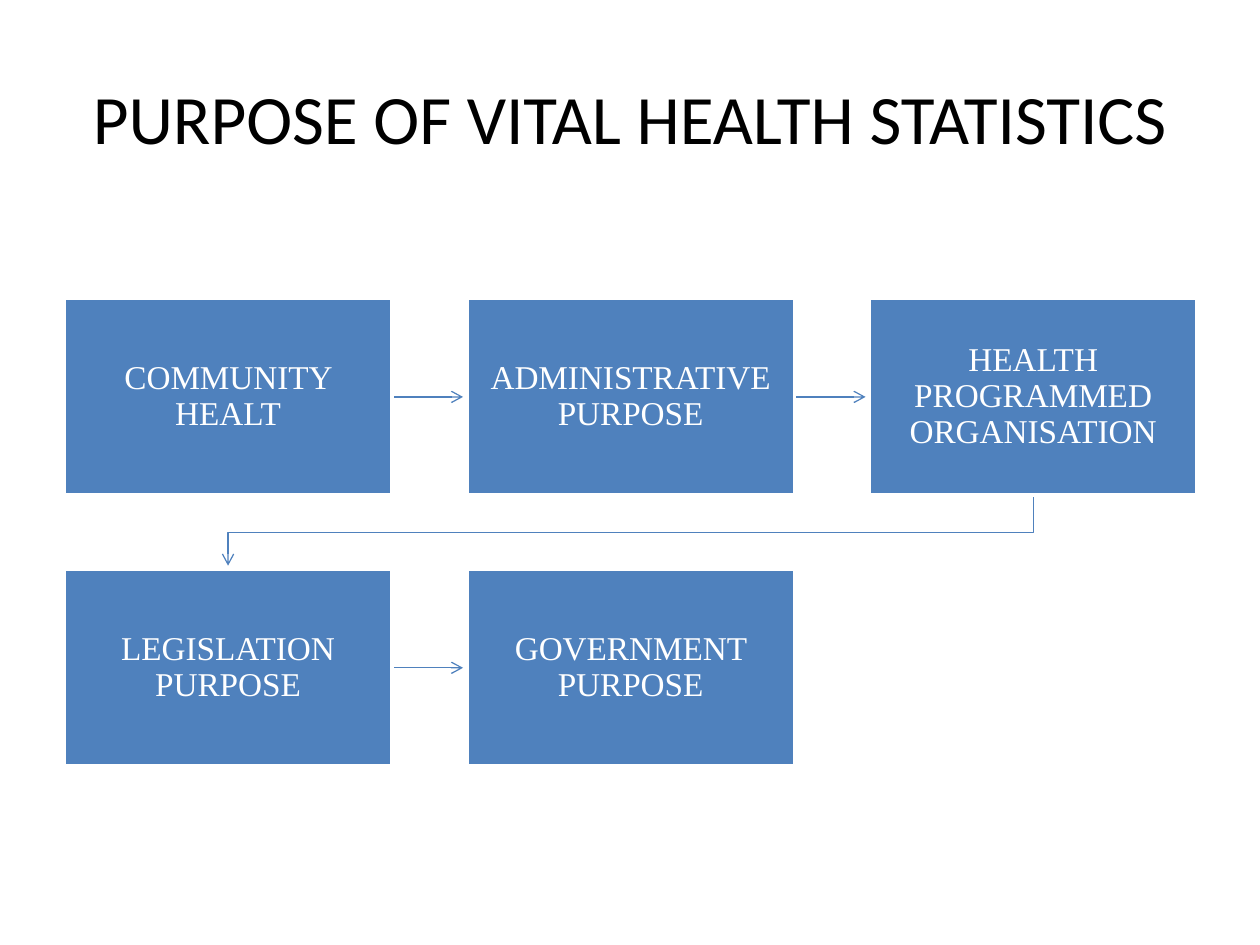
import dataclasses

import lxml.etree
import pptx
import pptx.dml.color
import pptx.enum.shapes
import pptx.enum.text
import pptx.oxml.ns
import pptx.util

Inches = pptx.util.Inches
Pt = pptx.util.Pt
qn = pptx.oxml.ns.qn


@dataclasses.dataclass(frozen=True)
class Theme:
    accent = pptx.dml.color.RGBColor.from_string("4F81BD")
    white = pptx.dml.color.RGBColor.from_string("FFFFFF")
    black = pptx.dml.color.RGBColor.from_string("000000")
    title_font: str = "Calibri"
    title_size: float = 39.6
    box_font: str = "Times New Roman"
    box_size: float = 19
    border_width: float = 2
    arrow_width: float = 0.75


THEME = Theme()
PURPOSES = [
    "COMMUNITY HEALT",
    "ADMINISTRATIVE PURPOSE",
    "HEALTH PROGRAMMED ORGANISATION",
    "LEGISLATION PURPOSE",
    "GOVERNMENT PURPOSE",
]
COLUMNS = 3
LEFT, TOP = 0.51, 2.37
BOX_WIDTH, BOX_HEIGHT = 2.6, 1.56
COLUMN_STEP, ROW_STEP = 3.195, 2.15
ARROW_GAP = 0.03


def box_position(index):
    row, column = divmod(index, COLUMNS)
    return LEFT + column * COLUMN_STEP, TOP + row * ROW_STEP


def format_text(paragraph, font_name, size, color):
    paragraph.alignment = pptx.enum.text.PP_ALIGN.CENTER
    for run in paragraph.runs:
        run.font.name = font_name
        run.font.size = Pt(size)
        run.font.color.rgb = color


def set_title(slide, text):
    title = slide.shapes.title
    title.left, title.top = Inches(0.5), Inches(0.3)
    title.width, title.height = Inches(9), Inches(1.25)
    frame = title.text_frame
    frame.text = text
    frame.vertical_anchor = pptx.enum.text.MSO_ANCHOR.MIDDLE
    format_text(frame.paragraphs[0], THEME.title_font, THEME.title_size, THEME.black)


def add_box(slide, index, text):
    left, top = box_position(index)
    box = slide.shapes.add_shape(
        pptx.enum.shapes.MSO_SHAPE.RECTANGLE,
        Inches(left), Inches(top), Inches(BOX_WIDTH), Inches(BOX_HEIGHT))
    box.shadow.inherit = False
    box.fill.solid()
    box.fill.fore_color.rgb = THEME.accent
    box.line.color.rgb = THEME.white
    box.line.width = Pt(THEME.border_width)
    frame = box.text_frame
    frame.word_wrap = True
    frame.vertical_anchor = pptx.enum.text.MSO_ANCHOR.MIDDLE
    frame.margin_left = frame.margin_right = Inches(0.15)
    frame.margin_top = frame.margin_bottom = Inches(0.15)
    frame.text = text
    paragraph = frame.paragraphs[0]
    paragraph.line_spacing = 0.9
    format_text(paragraph, THEME.box_font, THEME.box_size, THEME.white)


def style_arrow(arrow):
    arrow.line.color.rgb = THEME.accent
    arrow.line.width = Pt(THEME.arrow_width)
    properties = arrow.element.spPr
    lxml.etree.SubElement(properties.find(qn("a:ln")), qn("a:tailEnd"), type="arrow")
    if properties.find(qn("a:effectLst")) is None:
        lxml.etree.SubElement(properties, qn("a:effectLst"))


def add_straight_arrow(slide, index):
    """Point from a box to its neighbour on the right."""
    left, top = box_position(index)
    middle = Inches(top + BOX_HEIGHT / 2)
    style_arrow(slide.shapes.add_connector(
        pptx.enum.shapes.MSO_CONNECTOR.STRAIGHT,
        Inches(left + BOX_WIDTH), middle,
        Inches(left + COLUMN_STEP - ARROW_GAP), middle))


def add_row_break_arrow(slide, index):
    """Point from the last box of a row to the first box of the next."""
    left, top = box_position(index)
    next_left, next_top = box_position(index + 1)
    start_x = Inches(left + BOX_WIDTH / 2)
    end_x = Inches(next_left + BOX_WIDTH / 2)
    bottom = top + BOX_HEIGHT
    bend = Inches((bottom + next_top) / 2)
    builder = slide.shapes.build_freeform(start_x, Inches(bottom))
    builder.add_line_segments(
        [(start_x, bend), (end_x, bend), (end_x, Inches(next_top - ARROW_GAP))],
        close=False)
    arrow = builder.convert_to_shape()
    arrow.fill.background()
    style_arrow(arrow)


def main():
    presentation = pptx.Presentation()
    presentation.slide_width, presentation.slide_height = Inches(10), Inches(7.5)
    slide = presentation.slides.add_slide(presentation.slide_layouts[5])
    set_title(slide, "PURPOSE OF VITAL HEALTH STATISTICS")
    for index, purpose in enumerate(PURPOSES):
        if index < len(PURPOSES) - 1:
            ends_row = index % COLUMNS == COLUMNS - 1
            add_arrow = add_row_break_arrow if ends_row else add_straight_arrow
            add_arrow(slide, index)
        add_box(slide, index, purpose)
    presentation.save("out.pptx")


if __name__ == "__main__":
    main()
